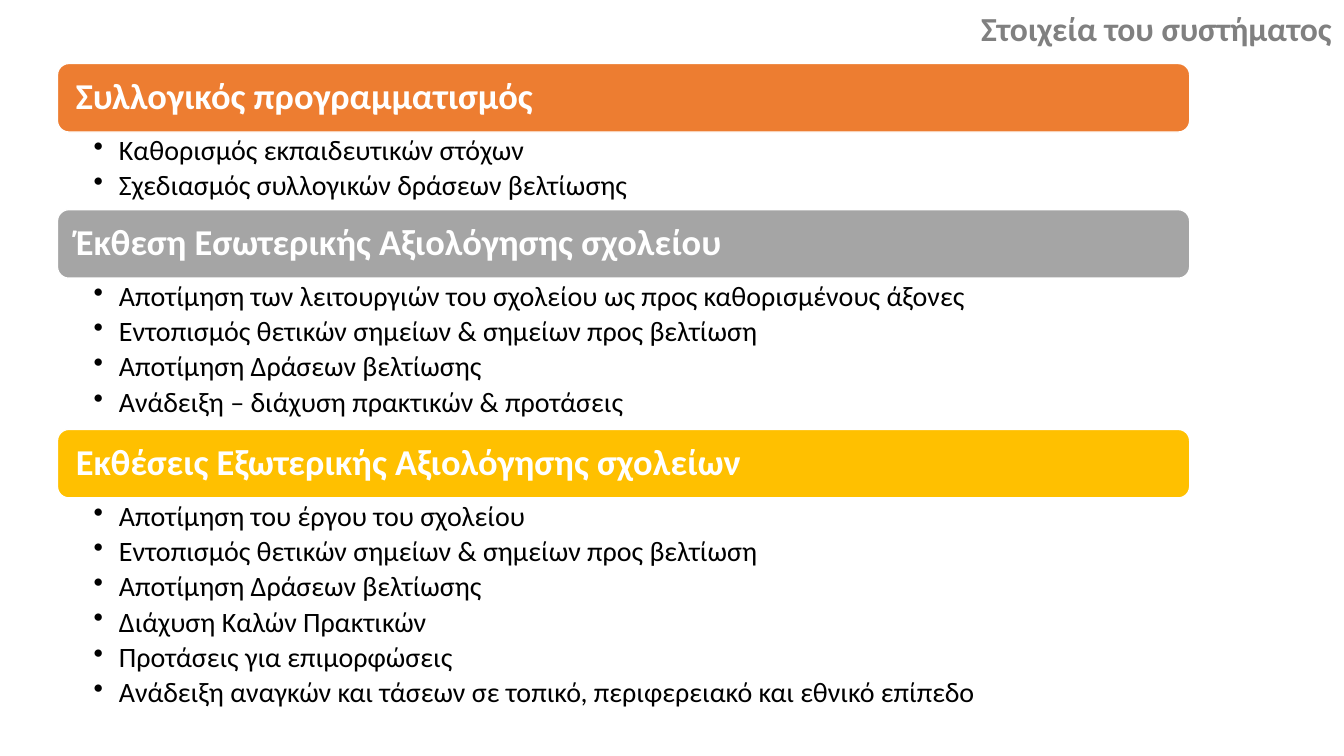
import pptx
import pptx.util
import pptx.dml.color
import pptx.enum.shapes
import pptx.enum.text
import pptx.oxml.ns
from lxml import etree

RGBColor = pptx.dml.color.RGBColor
Pt = pptx.util.Pt
ANCHOR = pptx.enum.text.MSO_ANCHOR
ALIGN = pptx.enum.text.PP_ALIGN

WHITE = RGBColor(0xFF, 0xFF, 0xFF)
BLACK = RGBColor(0, 0, 0)
TITLE_GRAY = RGBColor(0x80, 0x80, 0x80)
ORANGE = RGBColor(0xED, 0x7D, 0x31)
GRAY = RGBColor(0xA5, 0xA5, 0xA5)
YELLOW = RGBColor(0xFF, 0xC0, 0x00)

FONT = "Calibri"
HEADER_H = 68

# Header, colour, height of the list below, list items
SECTIONS = [
    ("Συλλογικός προγραμματισμός", ORANGE, 77, [
        "Καθορισμός εκπαιδευτικών στόχων",
        "Σχεδιασμός συλλογικών δράσεων βελτίωσης",
    ]),
    ("Έκθεση Εσωτερικής Αξιολόγησης σχολείου", GRAY, 150, [
        "Αποτίμηση των λειτουργιών του σχολείου ως προς καθορισμένους άξονες",
        "Εντοπισμός θετικών σημείων & σημείων προς βελτίωση",
        "Αποτίμηση Δράσεων βελτίωσης",
        "Ανάδειξη – διάχυση πρακτικών & προτάσεις",
    ]),
    ("Εκθέσεις Εξωτερικής Αξιολόγησης σχολείων", YELLOW, 230, [
        "Αποτίμηση του έργου του σχολείου",
        "Εντοπισμός θετικών σημείων & σημείων προς βελτίωση",
        "Αποτίμηση Δράσεων βελτίωσης",
        "Διάχυση Καλών Πρακτικών",
        "Προτάσεις για επιμορφώσεις",
        "Ανάδειξη αναγκών και τάσεων σε τοπικό, περιφερειακό και εθνικό επίπεδο",
    ]),
]


def px(n):
    """Length in EMU at 100 px to the inch."""
    return pptx.util.Emu(n * 9144)


def set_frame(tf, insets, anchor):
    tf.word_wrap = True
    tf.vertical_anchor = anchor
    tf.margin_left, tf.margin_top, tf.margin_right, tf.margin_bottom = map(px, insets)


def format_paragraph(p, size, color, bold=False, align=ALIGN.LEFT):
    p.alignment = align
    p.line_spacing = 0.9
    for r in p.runs:
        r.font.name = FONT
        r.font.size = Pt(size)
        r.font.bold = bold
        r.font.color.rgb = color


def add_bullet(p):
    pPr = p._p.get_or_add_pPr()
    pPr.set("marL", str(px(25)))
    pPr.set("indent", str(px(-25)))
    bullet = etree.SubElement(pPr, pptx.oxml.ns.qn("a:buChar"))
    bullet.set("char", "•")


def add_title(s, text, x, y, w, h):
    tf = s.shapes.add_textbox(px(x), px(y), px(w), px(h)).text_frame
    set_frame(tf, (10, 5, 10, 5), ANCHOR.MIDDLE)
    tf.text = text
    format_paragraph(tf.paragraphs[0], 24, TITLE_GRAY, True, ALIGN.CENTER)


def add_header(s, text, color, x, y, w, h):
    sp = s.shapes.add_shape(
        pptx.enum.shapes.MSO_SHAPE.ROUNDED_RECTANGLE, px(x), px(y), px(w), px(h))
    sp.shadow.inherit = False
    sp.fill.solid()
    sp.fill.fore_color.rgb = color
    sp.line.color.rgb = WHITE
    sp.line.width = Pt(1)
    tf = sp.text_frame
    set_frame(tf, (15, 11, 15, 11), ANCHOR.MIDDLE)
    tf.text = text
    format_paragraph(tf.paragraphs[0], 26, WHITE, True)


def add_list(s, items, x, y, w, h):
    tf = s.shapes.add_textbox(px(x), px(y), px(w), px(h)).text_frame
    set_frame(tf, (36, 4, 20, 4), ANCHOR.TOP)
    tf.text = "\n".join(items)
    for p in tf.paragraphs:
        format_paragraph(p, 20, BLACK)
        p.space_after = Pt(3.6)
        add_bullet(p)


def add_sections(s, x, y, w):
    for header, color, list_h, items in SECTIONS:
        add_header(s, header, color, x, y, w, HEADER_H)
        add_list(s, items, x, y + HEADER_H, w, list_h)
        y += HEADER_H + list_h


def main():
    prs = pptx.Presentation()
    prs.slide_width, prs.slide_height = px(1333), px(750)
    s = prs.slides.add_slide(prs.slide_layouts[6])
    add_title(s, "Στοιχεία του συστήματος", 960, 15, 374, 31)
    add_sections(s, 57, 63, 1123)
    prs.save("out.pptx")


if __name__ == "__main__":
    main()
